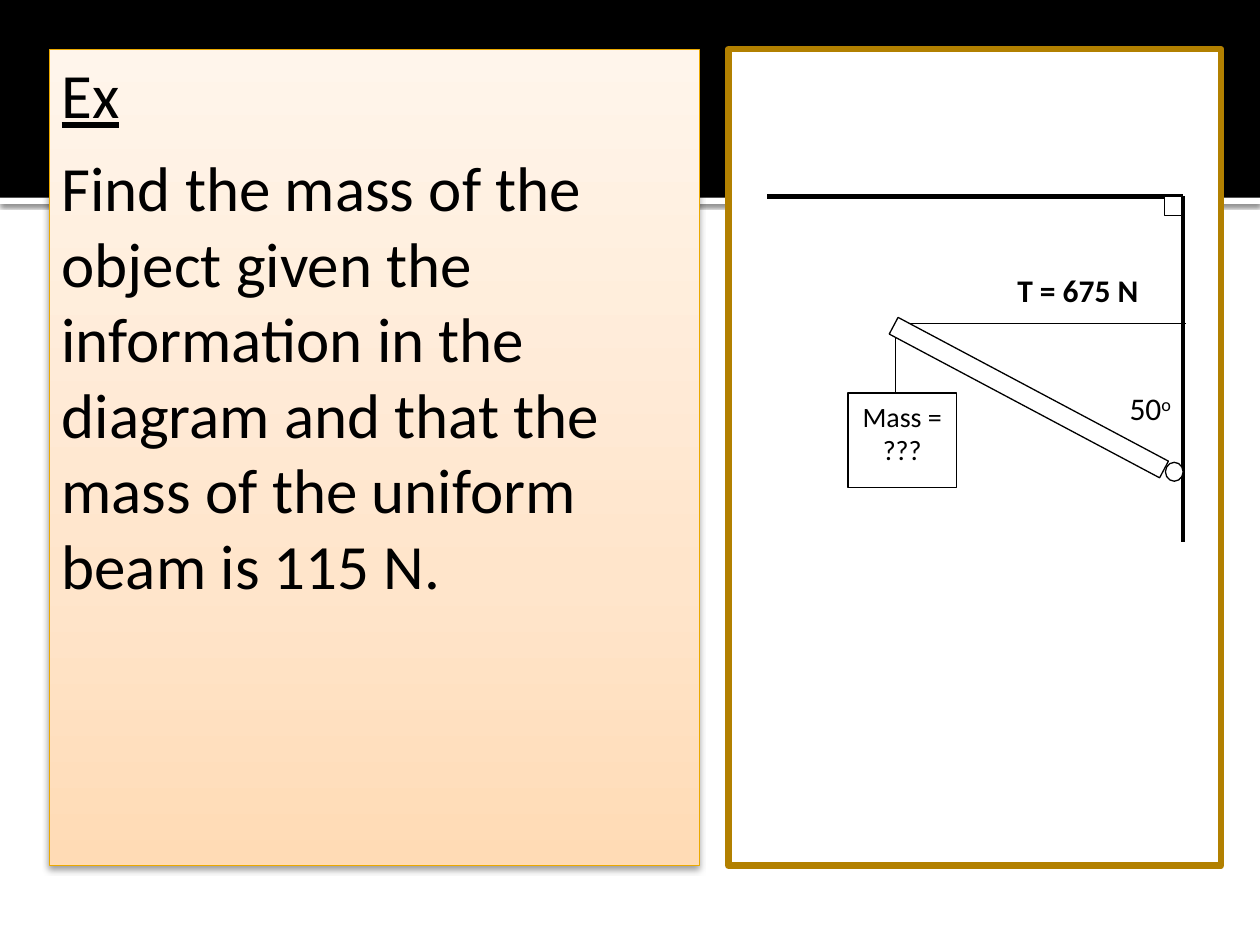
from dataclasses import dataclass
from typing import Optional

from lxml.etree import SubElement
from pptx import Presentation
from pptx.dml.color import RGBColor
from pptx.enum.shapes import MSO_CONNECTOR as CONN, MSO_SHAPE as SHP
from pptx.enum.text import MSO_ANCHOR as ANCHOR, PP_ALIGN as ALIGN
from pptx.oxml.ns import qn
from pptx.util import Pt

COLORS = {"black": "000000", "white": "FFFFFF", "frame": "B28000", "edge": "EBA900"}
PEACH = {0: "FFDBB5", 35: "FFE5CB", 100: "FFF5EB"}


@dataclass
class Shadow:
    alpha: int
    blur: float
    dist: float


@dataclass
class Box:
    x: float
    y: float
    w: float
    h: float
    fill: Optional[str] = "white"
    line: Optional[str] = "black"
    weight: float = 0.75
    kind: SHP = SHP.RECTANGLE
    rot: float = 0
    shadow: Optional[Shadow] = None


@dataclass
class Line:
    x1: float
    y1: float
    x2: float
    y2: float
    weight: float


@dataclass
class Run:
    text: str
    size: float
    bold: bool = False
    underline: bool = False
    raised: bool = False


def rgb(name: str) -> RGBColor:
    return RGBColor.from_string(COLORS[name])


def add_shadow(s, shadow: Shadow) -> None:
    effects = s._element.spPr.find(qn("a:effectLst"))
    outer = SubElement(effects, qn("a:outerShdw"), blurRad=str(Pt(shadow.blur)),
                       dist=str(Pt(shadow.dist)), dir="5400000", rotWithShape="0")
    color = SubElement(outer, qn("a:srgbClr"), val=COLORS["black"])
    SubElement(color, qn("a:alpha"), val=str(shadow.alpha * 1000))


def add_gradient(s, stops: dict[int, str]) -> None:
    s.fill.gradient()
    s.fill.gradient_angle = 90
    stop_list = s._element.spPr.find(qn("a:gradFill")).find(qn("a:gsLst"))
    stop_list.clear()
    for pos, color in stops.items():
        stop = SubElement(stop_list, qn("a:gs"), pos=str(pos * 1000))
        SubElement(stop, qn("a:srgbClr"), val=color)


def add_box(slide, b: Box):
    s = slide.shapes.add_shape(b.kind, Pt(b.x), Pt(b.y), Pt(b.w), Pt(b.h))
    s.rotation = b.rot
    s.shadow.inherit = False
    if b.fill:
        s.fill.solid()
        s.fill.fore_color.rgb = rgb(b.fill)
    if b.line:
        s.line.color.rgb = rgb(b.line)
        s.line.width = Pt(b.weight)
    else:
        s.line.fill.background()
    if b.shadow:
        add_shadow(s, b.shadow)
    return s


def add_line(slide, ln: Line) -> None:
    s = slide.shapes.add_connector(CONN.STRAIGHT, Pt(ln.x1), Pt(ln.y1), Pt(ln.x2), Pt(ln.y2))
    s.line.color.rgb = rgb("black")
    s.line.width = Pt(ln.weight)
    SubElement(s._element.spPr, qn("a:effectLst"))


def write(s, paragraphs: list[list[Run]], align: ALIGN = ALIGN.CENTER) -> None:
    tf = s.text_frame
    tf.word_wrap = True
    tf.vertical_anchor = ANCHOR.TOP
    for i, runs in enumerate(paragraphs):
        p = tf.add_paragraph() if i else tf.paragraphs[0]
        p.alignment = align
        p.space_after = Pt(10)
        for run in runs:
            r = p.add_run()
            r.text = run.text
            r.font.name = "Calibri"
            r.font.size = Pt(run.size)
            r.font.bold = run.bold
            r.font.underline = run.underline
            r.font.color.rgb = rgb("black")
            if run.raised:
                r._r.get_or_add_rPr().set("baseline", "30000")


def add_label(slide, x: float, y: float, w: float, runs: list[Run]) -> None:
    write(slide.shapes.add_textbox(Pt(x), Pt(y), Pt(w), Pt(33.1)), [runs])


def add_problem(slide) -> None:
    s = add_box(slide, Box(28.1, 28.1, 371.5, 466.6, None, "edge", 0.5,
                           shadow=Shadow(38, 3.5, 2)))
    add_gradient(s, PEACH)
    question = ("Find the mass of the object given the information in the diagram "
                "and that the mass of the uniform beam is 115 N.")
    write(s, [[Run("Ex", 36, underline=True)], [Run(question, 36)]], ALIGN.LEFT)


def add_diagram(slide) -> None:
    wall_x, ceiling_y = 676.1, 112.3
    for ln in (Line(511.9, 224.6, 511.9, 191.5, 0.75),
               Line(wall_x, ceiling_y, wall_x, 309.6, 2.5),
               Line(438.5, ceiling_y, wall_x, ceiling_y, 2.5)):
        add_line(slide, ln)
    add_box(slide, Box(665.3, ceiling_y, 10.1, 10.8))
    add_box(slide, Box(666, 264.2, 10.1, 10.8, kind=SHP.OVAL))
    write(add_box(slide, Box(484.6, 224.6, 61.9, 54)), [[Run("Mass = ???", 16)]])
    add_label(slide, 626.4, 218.9, 61.9, [Run("50", 18), Run("o", 18, raised=True)])
    add_label(slide, 569.5, 151.2, 92.9, [Run("T = 675 N", 18, bold=True)])
    add_line(slide, Line(513.4, 185, 677.5, 185, 0.5))
    add_box(slide, Box(500.4, 221.8, 175, 10.8, rot=28))


def main() -> None:
    """Build the beam equilibrium slide."""
    prs = Presentation()
    prs.slide_width, prs.slide_height = Pt(720), Pt(540)
    slide = prs.slides.add_slide(prs.slide_layouts[6])
    add_box(slide, Box(0, 113, 720, 3.6, line=None, shadow=Shadow(60, 2.5, 0.8)))
    add_box(slide, Box(0, 0, 720, 113, "black", None))
    add_box(slide, Box(416.2, 28.1, 281.5, 466.6, "white", "frame", 3.78))
    add_problem(slide)
    add_diagram(slide)
    prs.save("out.pptx")


if __name__ == "__main__":
    main()
